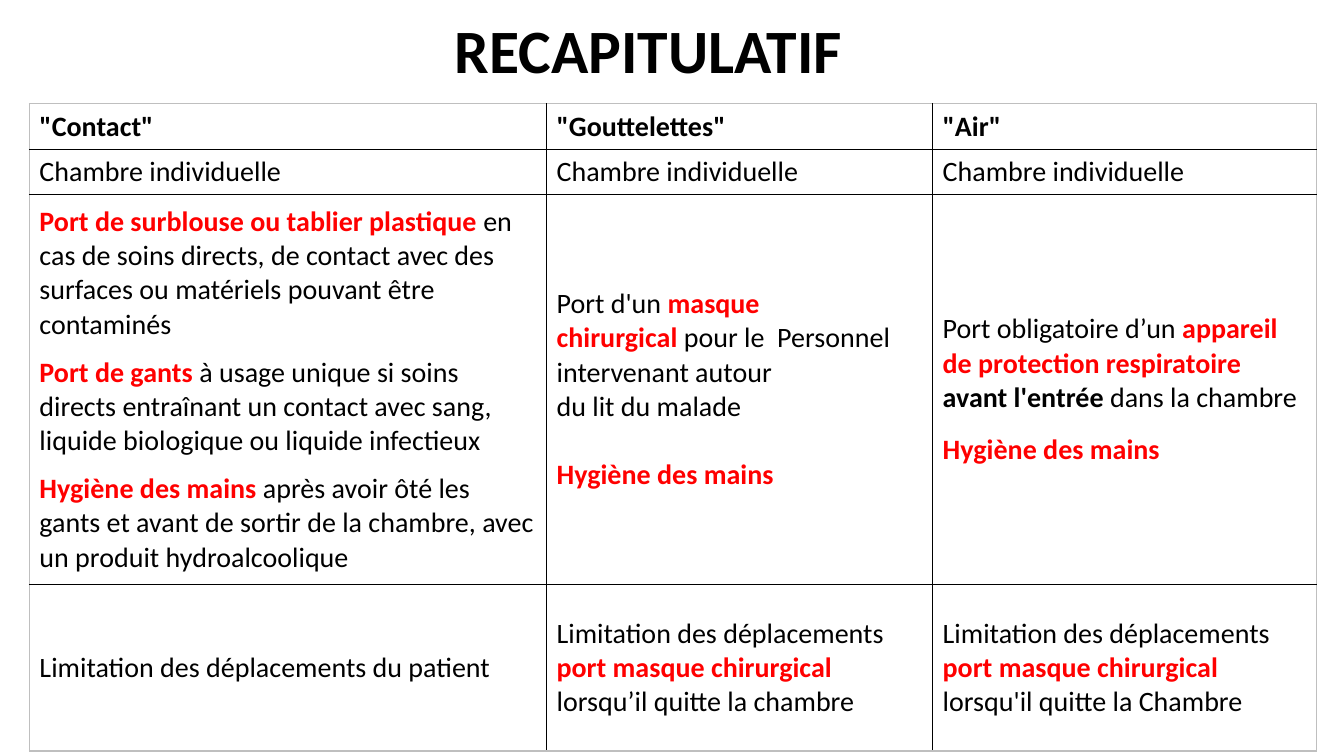
import pptx
import pptx.util
import pptx.dml.color
import pptx.enum.text
import pptx.oxml
import pptx.oxml.ns

Pt = pptx.util.Pt
RGB = pptx.dml.color.RGBColor.from_string
MIDDLE = pptx.enum.text.MSO_ANCHOR.MIDDLE

theme = {
    "font": "Calibri",
    "title": 44,
    "body": 20,
    "ink": "000000",
    "alert": "FF0000",
    "paper": "FFFFFF",
    "edge": "BFBFBF",
}


def style(run, size, color, bold):
    run.font.name = theme["font"]
    run.font.size = Pt(size)
    run.font.bold = bold
    run.font.color.rgb = RGB(theme[color])


def border(cell, side, color):
    line = pptx.oxml.parse_xml(
        f'<a:{side} {pptx.oxml.ns.nsdecls("a")} w="{Pt(1)}">'
        f'<a:solidFill><a:srgbClr val="{theme[color]}"/></a:solidFill></a:{side}>'
    )
    cell._tc.get_or_add_tcPr().append(line)


deck = pptx.Presentation()
deck.slide_width = Pt(960)
deck.slide_height = Pt(540)
slide = deck.slides.add_slide(deck.slide_layouts[6])

title = slide.shapes.add_textbox(Pt(33), Pt(0), Pt(861), Pt(77))
frame = title.text_frame
frame.word_wrap = True
frame.vertical_anchor = MIDDLE
frame.text = "RECAPITULATIF"
head = frame.paragraphs[0]
head.alignment = pptx.enum.text.PP_ALIGN.CENTER
head.line_spacing = 0.9
style(head.runs[0], theme["title"], "ink", True)

marks = {"*": ("alert", True), "#": ("ink", True)}
plain = ("ink", False)
room = "Chambre individuelle"
hands = "*Hygiène des mains"
mask = "*port masque chirurgical "

contact = [
    (0, ["*Port de surblouse ou tablier plastique ",
         "en cas de soins directs, de contact avec des surfaces ou matériels pouvant être contaminés"]),
    (9.8, ["*Port de gants ",
           "à usage unique si soins directs entraînant un contact avec sang, "
           "liquide biologique ou liquide infectieux"]),
    (9.8, [hands + " ",
           "après avoir ôté les gants et avant de sortir de la chambre, avec un produit hydroalcoolique"]),
]
drops = [
    (0, ["Port d'un ", "*masque"]),
    (0, ["*chirurgical ", "pour le  Personnel intervenant autour"]),
    (0, ["du lit du malade"]),
    (24.4, [hands]),
]
air = [
    (0, ["Port obligatoire d’un ", "*appareil de protection respiratoire ",
         "#avant l'entrée", " dans la chambre"]),
    (12.8, [hands]),
]
rows = [
    [[(0, [f'#"{name}"'])] for name in ("Contact", "Gouttelettes", "Air")],
    [[(0, [room])]] * 3,
    [contact, drops, air],
    [
        [(0, ["Limitation des déplacements du patient"])],
        [(0, ["Limitation des déplacements"]), (0, [mask, "lorsqu’il quitte la chambre"])],
        [(0, ["Limitation des déplacements ", mask, "lorsqu'il quitte la Chambre"])],
    ],
]
widths = [369.4, 275.8, 274.3]
heights = [32.4, 32.4, 278.6, 118.8]

table = slide.shapes.add_table(
    len(rows), len(widths), Pt(21), Pt(74.2), Pt(sum(widths)), Pt(sum(heights))
).table
table.first_row = False
table.horz_banding = False
for col, width in zip(table.columns, widths):
    col.width = Pt(width)

for r, (row, height) in enumerate(zip(rows, heights)):
    table.rows[r].height = Pt(height)
    for c, paras in enumerate(row):
        cell = table.cell(r, c)
        cell.vertical_anchor = MIDDLE
        outer = {
            "lnL": c == 0,
            "lnR": c == len(widths) - 1,
            "lnT": r == 0,
            "lnB": r == len(rows) - 1,
        }
        for side, rim in outer.items():
            border(cell, side, "edge" if rim else "ink")
        cell.fill.solid()
        cell.fill.fore_color.rgb = RGB(theme["paper"])
        for i, (gap, parts) in enumerate(paras):
            para = cell.text_frame.add_paragraph() if i else cell.text_frame.paragraphs[0]
            para.space_before = Pt(gap)
            for part in parts:
                run = para.add_run()
                run.text = part.lstrip("*#")
                style(run, theme["body"], *marks.get(part[0], plain))

deck.save("out.pptx")
